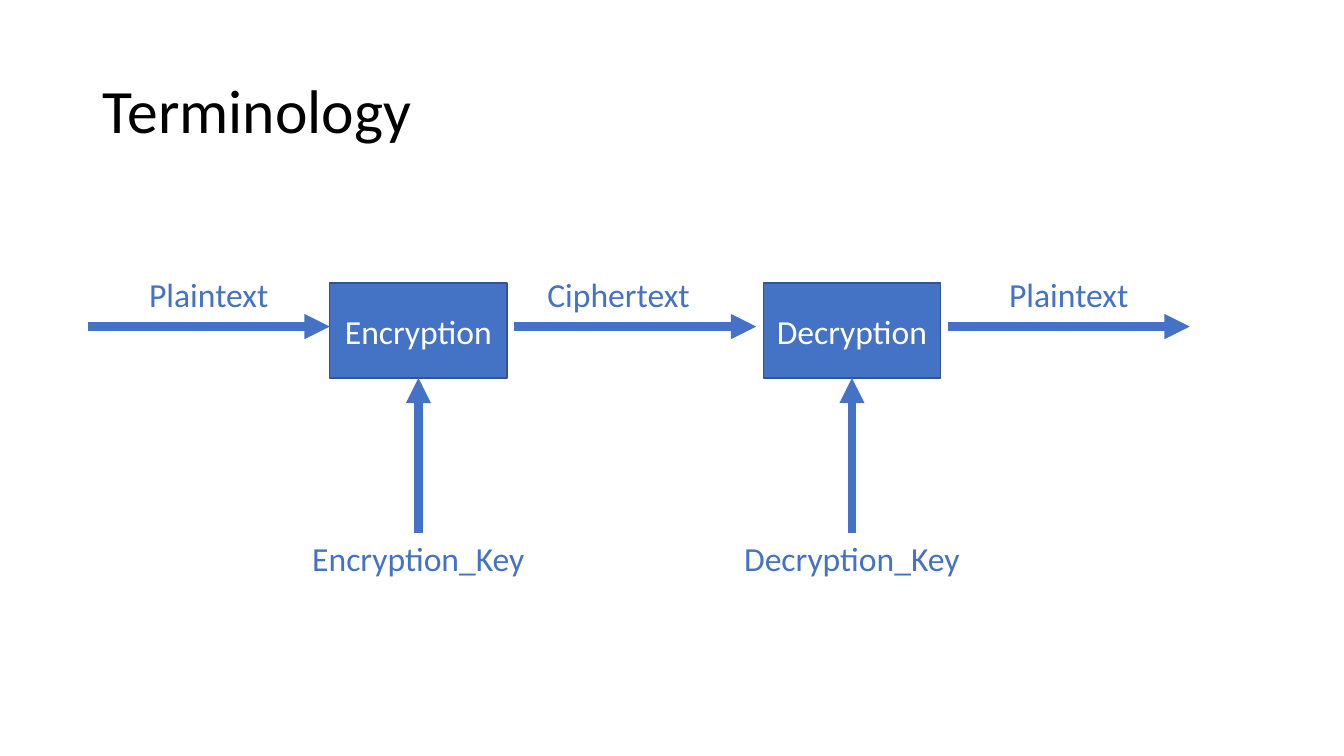
from pptx import Presentation
from pptx.dml.color import RGBColor
from pptx.enum.shapes import MSO_CONNECTOR as Connector, MSO_SHAPE as Shape
from pptx.enum.text import MSO_ANCHOR as Anchor, MSO_AUTO_SIZE as AutoSize, PP_ALIGN as Align
from pptx.oxml.ns import qn
from pptx.util import Inches, Pt
from lxml.etree import SubElement

COLORS = {"title": "000000", "blue": "4472C4", "edge": "325491", "white": "FFFFFF"}
FONT = "Calibri"
GRID = Inches(0.1)

STAGE_LEFT, STAGE_PITCH = 32.7, 43
STAGE_TOP, STAGE_WIDTH, STAGE_HEIGHT = 28.1, 17.6, 9.4
FLOW_TOP, FLOW_LENGTH, FLOW_GAP = 32.4, 24, 0.7
LABEL_TOP, LABEL_HEIGHT, KEY_TOP = 26.7, 5, 52.9


def cells(*counts):
    return [round(count * GRID) for count in counts]


def color(name):
    return RGBColor.from_string(COLORS[name])


def write(frame, text, size, color_name, align=Align.CENTER):
    para = frame.paragraphs[0]
    para.alignment = align
    span = para.add_run()
    span.text = text
    span.font.name = FONT
    span.font.size = Pt(size)
    span.font.color.rgb = color(color_name)
    return para


def add_title(page, text, box):
    title = page.shapes.title
    title.left, title.top, title.width, title.height = cells(*box)
    frame = title.text_frame
    frame.auto_size = AutoSize.NONE
    frame.vertical_anchor = Anchor.MIDDLE
    write(frame, text, 44, "title", Align.LEFT).line_spacing = 0.9


def add_label(page, text, center, top, width):
    box = cells(center - width / 2, top, width, LABEL_HEIGHT)
    frame = page.shapes.add_textbox(*box).text_frame
    frame.word_wrap = False
    frame.auto_size = AutoSize.SHAPE_TO_FIT_TEXT
    write(frame, text, 24, "blue")


def add_arrow(page, start, end):
    arrow = page.shapes.add_connector(Connector.STRAIGHT, *cells(*start, *end))
    arrow.line.color.rgb = color("blue")
    arrow.line.width = Pt(6)
    SubElement(arrow.line._get_or_add_ln(), qn("a:tailEnd"), type="triangle")
    SubElement(arrow._element.spPr, qn("a:effectLst"))
    return arrow


def add_flow(page, text, left, label_center, label_width):
    add_label(page, text, label_center, LABEL_TOP, label_width)
    add_arrow(page, (left, FLOW_TOP), (left + FLOW_LENGTH, FLOW_TOP))


def add_stage(page, text, left, key_width):
    box = cells(left, STAGE_TOP, STAGE_WIDTH, STAGE_HEIGHT)
    stage = page.shapes.add_shape(Shape.RECTANGLE, *box)
    stage.shadow.inherit = False
    stage.fill.solid()
    stage.fill.fore_color.rgb = color("blue")
    stage.line.color.rgb = color("edge")
    stage.line.width = Pt(1)
    stage.text_frame.word_wrap = True
    stage.text_frame.vertical_anchor = Anchor.MIDDLE
    write(stage.text_frame, text, 24, "white")

    center = left + STAGE_WIDTH / 2
    add_label(page, f"{text}_Key", center, KEY_TOP, key_width)
    arrow = add_arrow(page, (center, KEY_TOP), (center, STAGE_TOP + STAGE_HEIGHT))
    arrow.end_connect(stage, 2)


def add_cipher_diagram(page, left):
    second = left + STAGE_PITCH
    after = STAGE_WIDTH + FLOW_GAP
    middle = FLOW_LENGTH / 2
    add_flow(page, "Plaintext", left - FLOW_LENGTH, left - middle, 14)
    add_stage(page, "Encryption", left, 23.3)
    add_flow(page, "Ciphertext", left + after, left + after + middle - 1.65, 16.3)
    add_stage(page, "Decryption", second, 23.7)
    add_flow(page, "Plaintext", second + after, second + after + middle, 14)


def main():
    deck = Presentation()
    deck.slide_width, deck.slide_height = Inches(13.33), Inches(7.5)
    page = deck.slides.add_slide(deck.slide_layouts[5])
    add_title(page, "Terminology", (9.2, 4, 115, 14.5))
    add_cipher_diagram(page, STAGE_LEFT)
    deck.save("out.pptx")


if __name__ == "__main__":
    main()
